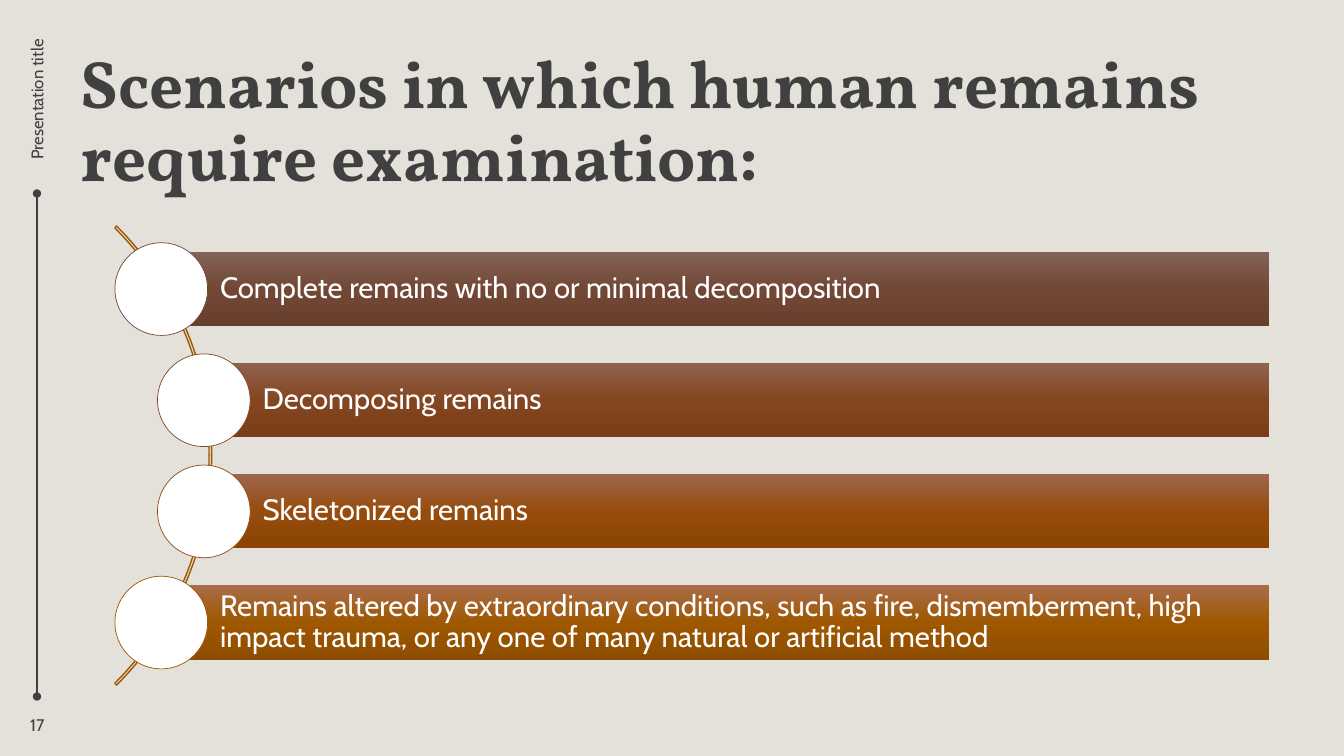
"""Build the slide listing scenarios in which human remains require examination."""
from copy import deepcopy

from lxml import etree
from pptx import Presentation
from pptx import util as u
from pptx.dml.color import RGBColor
from pptx.enum import shapes, text
from pptx.oxml.ns import qn


class Theme:
    paper = RGBColor.from_string("E4E1DB")
    ink = RGBColor.from_string("404040")
    white = RGBColor.from_string("FFFFFF")
    arc = RGBColor.from_string("9F5700")
    heading_font, body_font = "Vollkorn", "Cabin"
    heading_size, scenario_size, margin_size = 48, 21, 12


def write(holder, content, size, color, font=Theme.body_font, bold=False,
          align=text.PP_ALIGN.LEFT, spacing=1.0):
    frame = holder.text_frame
    frame.text = content
    frame.word_wrap = True
    frame.auto_size = text.MSO_AUTO_SIZE.NONE
    frame.vertical_anchor = text.MSO_ANCHOR.MIDDLE
    paragraph = frame.paragraphs[0]
    paragraph.alignment = align
    paragraph.line_spacing = spacing
    paragraph.font.name = font
    paragraph.font.size = u.Pt(size)
    paragraph.font.bold = bold
    paragraph.font.color.rgb = color


def box(*lengths):
    return [u.Pt(length) for length in lengths]


deck = Presentation()
deck.slide_width, deck.slide_height = box(960, 540)
slide = deck.slides.add_slide(deck.slide_layouts[5])
slide.background.fill.solid()
slide.background.fill.fore_color.rgb = Theme.paper

rail = slide.shapes.add_connector(
    shapes.MSO_CONNECTOR.STRAIGHT, *box(26.4, 138.2, 26.4, 497.5))
rail.line.color.rgb = Theme.ink
rail.line.width = u.Pt(1)
rail_line = rail.line._get_or_add_ln()
for end in ("a:headEnd", "a:tailEnd"):
    etree.SubElement(rail_line, qn(end), type="oval")
etree.SubElement(rail._element.spPr, qn("a:effectLst"))

heading = slide.shapes.title
heading.left, heading.top, heading.width, heading.height = box(50.4, 36, 861, 104.4)
write(heading, "Scenarios in which human remains require examination:",
      Theme.heading_size, Theme.ink, Theme.heading_font, bold=True, spacing=0.9)

arc = slide.shapes.add_shape(
    shapes.MSO_SHAPE.BLOCK_ARC, *box(-312.5, 93.6, 463.7, 463.7))
for index, value in enumerate((189, 27, 0.004)):
    arc.adjustments[index] = value
arc.fill.background()
arc.line.color.rgb = Theme.arc
arc.line.width = u.Pt(1)
arc.shadow.inherit = False

scenarios = [
    ("Complete remains with no or minimal decomposition", 115.2,
     ("816359", "724735", "683E2D"), "6F4838"),
    ("Decomposing remains", 145.6, ("8F6250", "844620", "793D19"), "804725"),
    ("Skeletonized remains", 145.6, ("9E664C", "964C0C", "8B4305"), "904C12"),
    ("Remains altered by extraordinary conditions, such as fire, dismemberment, "
     "high impact trauma, or any one of many natural or artificial method", 115.2,
     ("AA6D4B", "9F5700", "8D4D00"), "9F5700"),
]
bars_top, bar_pitch, bar_height, bars_right, marker_size = 180, 79.4, 53, 906.5, 66.2
for row, (scenario, left, shades, outline) in enumerate(scenarios):
    top = bars_top + row * bar_pitch
    bar = slide.shapes.add_shape(
        shapes.MSO_SHAPE.RECTANGLE, *box(left, top, bars_right - left, bar_height))
    bar.shadow.inherit = False
    bar.line.fill.background()
    bar.fill.gradient()
    bar.fill.gradient_angle = 270
    stops = bar.fill._fill._gradFill.gsLst
    stops.append(deepcopy(stops[0]))
    for stop, shade, position in zip(bar.fill.gradient_stops, shades, (0, 0.5, 1)):
        stop.color.rgb = RGBColor.from_string(shade)
        stop.position = position
    write(bar, scenario, Theme.scenario_size, Theme.white, spacing=0.9)
    frame = bar.text_frame
    frame.margin_left = u.Pt(42)
    frame.margin_top = frame.margin_right = frame.margin_bottom = u.Pt(4.2)

    marker = slide.shapes.add_shape(
        shapes.MSO_SHAPE.OVAL,
        *box(left - marker_size / 2, top + (bar_height - marker_size) / 2,
             marker_size, marker_size))
    marker.shadow.inherit = False
    marker.fill.solid()
    marker.fill.fore_color.rgb = Theme.white
    marker.line.color.rgb = RGBColor.from_string(outline)
    marker.line.width = u.Pt(0.5)

running_title = slide.shapes.add_textbox(*box(-41.8, 77.8, 136, 22.3))
running_title.rotation = 270
write(running_title, "Presentation title", Theme.margin_size, Theme.ink,
      align=text.PP_ALIGN.RIGHT)

page_number = slide.shapes.add_textbox(*box(10.8, 506.2, 31.7, 22.3))
write(page_number, "17", Theme.margin_size, Theme.ink, align=text.PP_ALIGN.CENTER)

deck.save("out.pptx")
